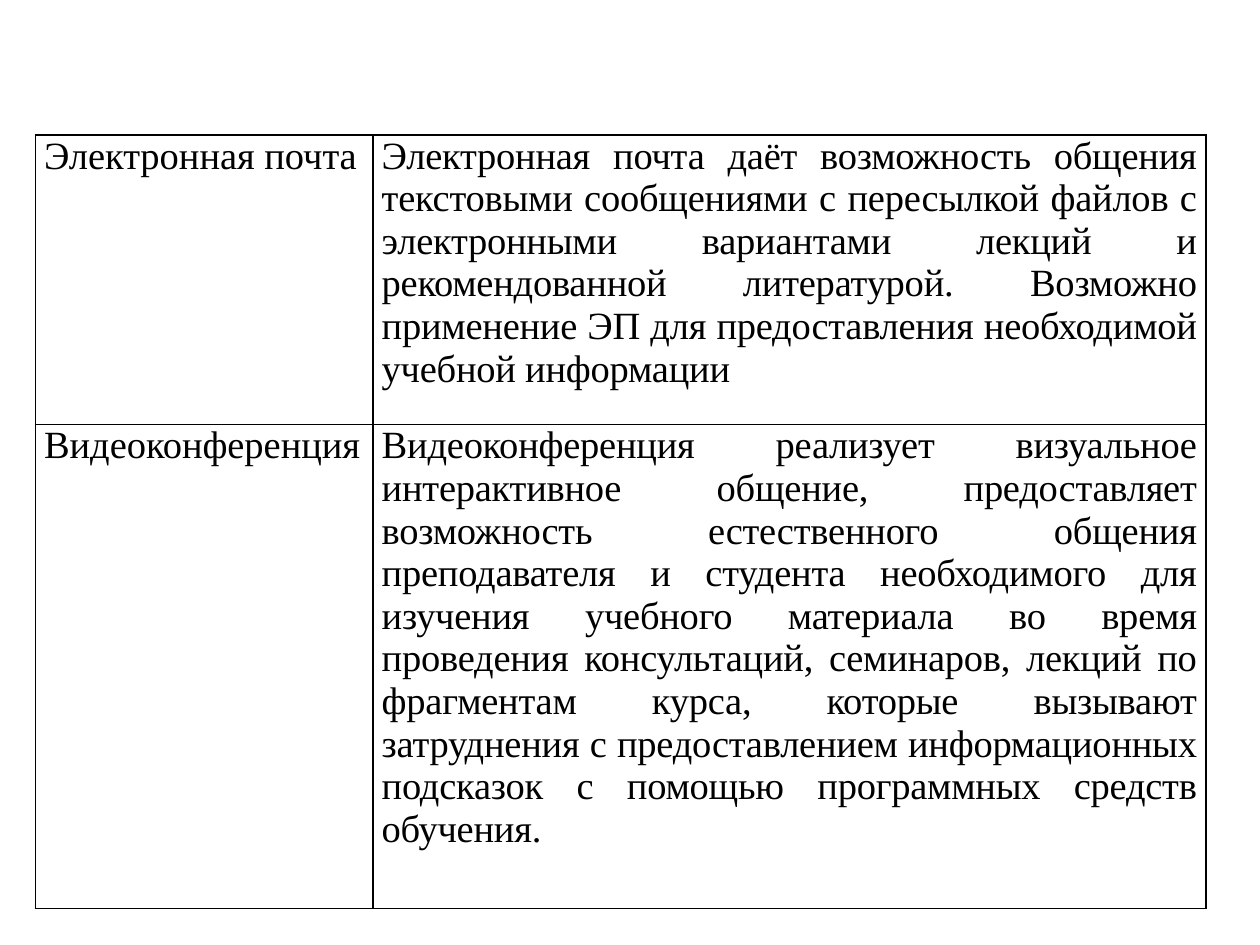
import dataclasses

import pptx
import pptx.dml.color
import pptx.enum.text
import pptx.oxml
import pptx.oxml.ns
import pptx.util

Inches = pptx.util.Inches
ALIGN = pptx.enum.text.PP_ALIGN
BLACK = "000000"


@dataclasses.dataclass
class Tool:
    name: str
    description: str
    height: float


TOOLS = [
    Tool("Электронная почта",
         "Электронная почта даёт возможность общения текстовыми сообщениями "
         "с пересылкой файлов с электронными вариантами лекций и "
         "рекомендованной литературой. Возможно применение ЭП для "
         "предоставления необходимой учебной информации", 2.3),
    Tool("Видеоконференция",
         "Видеоконференция реализует визуальное интерактивное общение, "
         "предоставляет возможность естественного общения преподавателя и "
         "студента необходимого для изучения учебного материала во время "
         "проведения консультаций, семинаров, лекций по фрагментам курса, "
         "которые вызывают затруднения с предоставлением информационных "
         "подсказок с помощью программных средств обучения.", 3.84),
]
COLUMN_WIDTHS = [2.68, 6.61]


def color(value: str) -> pptx.dml.color.RGBColor:
    return pptx.dml.color.RGBColor.from_string(value)


def write(frame, text: str, *, size: float = 22, align=ALIGN.LEFT,
          spacing: float = 0, fill: str = BLACK) -> None:
    """Write one formatted paragraph; spacing is in points."""
    paragraph = frame.paragraphs[0]
    paragraph.alignment = align
    run = paragraph.add_run()
    run.text = text
    run.font.name = "Times New Roman"
    run.font.size = pptx.util.Pt(size)
    run.font.bold = False
    run.font.color.rgb = color(fill)
    run.font._element.set("spc", str(round(spacing * 100)))


def format_cell(cell, border: str = BLACK, width: float = 1) -> None:
    """Set narrow margins, thin borders on every side and no fill."""
    cell.margin_left = cell.margin_right = Inches(0.07)
    cell.margin_top = cell.margin_bottom = 0
    properties = cell._tc.get_or_add_tcPr()
    for side in ("lnL", "lnR", "lnT", "lnB"):
        properties.append(pptx.oxml.parse_xml(
            f'<a:{side} {pptx.oxml.ns.nsdecls("a")} w="{pptx.util.Pt(width)}">'
            f'<a:solidFill><a:srgbClr val="{border}"/></a:solidFill>'
            f'</a:{side}>'))
    cell.fill.background()


def add_tool_table(slide, tools: list[Tool], left: float, top: float) -> None:
    table = slide.shapes.add_table(
        len(tools), len(COLUMN_WIDTHS), Inches(left), Inches(top),
        Inches(sum(COLUMN_WIDTHS)),
        Inches(sum(tool.height for tool in tools))).table
    table.first_row = table.horz_banding = False
    for column, width in zip(table.columns, COLUMN_WIDTHS):
        column.width = Inches(width)
    for row, tool in zip(table.rows, tools):
        row.height = Inches(tool.height)
        name, description = row.cells
        for cell in (name, description):
            format_cell(cell)
        write(name.text_frame, tool.name)
        write(description.text_frame, tool.description,
              align=ALIGN.JUSTIFY, spacing=-0.1)


def main() -> None:
    presentation = pptx.Presentation()
    presentation.slide_width = Inches(10)
    presentation.slide_height = Inches(7.5)
    # Blank layout: the slide holds only the table
    slide = presentation.slides.add_slide(presentation.slide_layouts[6])
    add_tool_table(slide, TOOLS, left=0.28, top=1.07)
    presentation.save("out.pptx")


if __name__ == "__main__":
    main()
